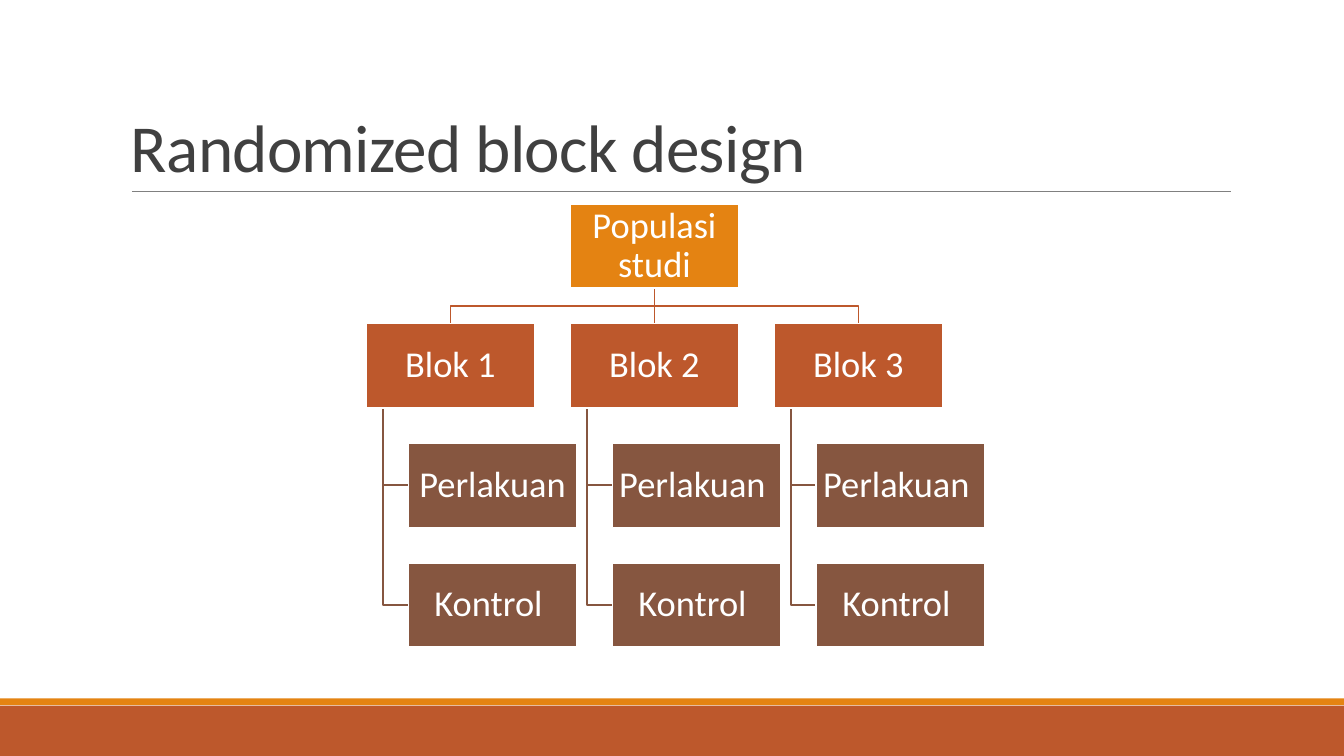
"""Build the randomized block design slide: a population split into treated and control blocks."""
from dataclasses import dataclass
from typing import Any

from pptx import Presentation
from pptx import util as u
from pptx.dml import color
from pptx.enum import shapes, text
from pptx.oxml import ns, xmlchemy
from pptx.oxml import parse_xml


@dataclass(frozen=True)
class Theme:
    font: str = "Calibri"
    ink: str = "404040"
    rule: str = "808080"
    white: str = "FFFFFF"
    orange: str = "E48312"
    rust: str = "BD582C"
    brown: str = "865640"
    title_size: float = 48
    node_size: float = 26
    line_width: float = 1.25
    rule_width: float = 0.5


@dataclass(frozen=True)
class Node:
    label: str
    left: float
    row: int
    fill: str

    @property
    def top(self) -> float:
        return FIRST_TOP + self.row * ROW_STEP

    @property
    def bottom(self) -> float:
        return self.top + NODE_HEIGHT

    @property
    def centre(self) -> float:
        return self.left + NODE_WIDTH / 2

    @property
    def middle(self) -> float:
        return self.top + NODE_HEIGHT / 2


Point = tuple[float, float]
THEME = Theme()
PAGE_WIDTH, PAGE_HEIGHT = 960, 540
NODE_WIDTH, NODE_HEIGHT = 120.4, 60.2
FIRST_TOP, ROW_STEP = 145.6, 85.5
FIRST_LEFT, COLUMN_STEP = 261.6, 145.7
CHILD_INDENT, TRUNK_INDENT = 30.1, 12
BLOCKS = {
    "Blok 1": ("Perlakuan", "Kontrol "),
    "Blok 2": ("Perlakuan ", "Kontrol "),
    "Blok 3": ("Perlakuan ", "Kontrol "),
}


def rgb(value: str) -> color.RGBColor:
    """Turn a hex value into a colour."""
    return color.RGBColor.from_string(value)


def apply(target: Any, values: dict[str, Any]) -> None:
    """Set each format value on the target."""
    for name, value in values.items():
        setattr(target, name, value)


def set_line(shape: Any, value: str, width: float) -> None:
    """Give a shape or connector a solid line."""
    shape.line.color.rgb = rgb(value)
    shape.line.width = u.Pt(width)


def add_block(page: Any, left: float, top: float, width: float, height: float, fill: str) -> Any:
    """Add a plain filled rectangle without a line."""
    box = page.shapes.add_shape(
        shapes.MSO_SHAPE.RECTANGLE, u.Pt(left), u.Pt(top), u.Pt(width), u.Pt(height))
    box.shadow.inherit = False
    box.fill.solid()
    box.fill.fore_color.rgb = rgb(fill)
    box.line.fill.background()
    return box


def write(box: Any, label: str, size: float, ink: str, spacing: float,
          align: Any, anchor: Any, inset: Point) -> Any:
    """Write one paragraph into a box and return its span."""
    across, down = map(u.Pt, inset)
    frame = box.text_frame
    apply(frame, {"word_wrap": True, "vertical_anchor": anchor,
                  "margin_left": across, "margin_right": across,
                  "margin_top": down, "margin_bottom": down})
    para = frame.paragraphs[0]
    apply(para, {"alignment": align, "line_spacing": spacing})
    span = para.add_run()
    span.text = label
    apply(span.font, {"name": THEME.font, "size": u.Pt(size)})
    span.font.color.rgb = rgb(ink)
    return span


def add_line(page: Any, start: Point, end: Point, value: str, width: float) -> None:
    """Draw a straight line without a shadow."""
    line = page.shapes.add_connector(
        shapes.MSO_CONNECTOR.STRAIGHT, *(u.Pt(length) for length in start + end))
    set_line(line, value, width)
    line.element.spPr.append(parse_xml(f"<a:effectLst {ns.nsdecls('a')}/>"))


def add_elbow(page: Any, points: list[Point], value: str) -> None:
    """Draw an open bent line through the points."""
    corners = [(u.Pt(across), u.Pt(down)) for across, down in points]
    builder = page.shapes.build_freeform(*corners[0])
    builder.add_line_segments(corners[1:], close=False)
    elbow = builder.convert_to_shape()
    elbow.shadow.inherit = False
    elbow.fill.background()
    set_line(elbow, value, THEME.line_width)


def add_node(page: Any, node: Node) -> None:
    """Draw one labelled box of the tree."""
    box = add_block(page, node.left, node.top, NODE_WIDTH, NODE_HEIGHT, node.fill)
    set_line(box, THEME.white, THEME.line_width)
    write(box, node.label, THEME.node_size, THEME.white, 0.9,
          text.PP_ALIGN.CENTER, text.MSO_ANCHOR.MIDDLE, (1.3, 1.3))


def link_block(page: Any, root: Node, block: Node) -> None:
    """Join the population to one block."""
    start, end = (root.centre, root.bottom), (block.centre, block.top)
    if block.left == root.left:
        add_line(page, start, end, THEME.rust, THEME.line_width)
        return
    bend = (root.bottom + block.top) / 2
    add_elbow(page, [start, (root.centre, bend), (block.centre, bend), end], THEME.rust)


def link_child(page: Any, block: Node, child: Node) -> None:
    """Join a block to one of its groups."""
    trunk = block.left + TRUNK_INDENT
    add_elbow(page, [(trunk, block.bottom), (trunk, child.middle),
                     (child.left, child.middle)], THEME.brown)


def add_tree(page: Any) -> None:
    """Draw the population, its blocks and their groups."""
    root = Node("Populasi studi", FIRST_LEFT + COLUMN_STEP, 0, THEME.orange)
    nodes = [root]
    for column, (label, groups) in enumerate(BLOCKS.items()):
        block = Node(label, FIRST_LEFT + column * COLUMN_STEP, 1, THEME.rust)
        children = [Node(group, block.left + CHILD_INDENT, row, THEME.brown)
                    for row, group in enumerate(groups, start=2)]
        link_block(page, root, block)
        for child in children:
            link_child(page, block, child)
        nodes += [block, *children]
    for node in nodes:
        add_node(page, node)


def add_title(page: Any) -> None:
    """Add the heading and the rule below it."""
    add_line(page, (94.3, 136.8), (879.1, 136.8), THEME.rule, THEME.rule_width)
    box = page.shapes.add_textbox(u.Pt(86.4), u.Pt(22.6), u.Pt(792), u.Pt(114.2))
    write(box, "Randomized block design", THEME.title_size, THEME.ink, 0.85,
          text.PP_ALIGN.LEFT, text.MSO_ANCHOR.BOTTOM, (7.2, 3.6))
    for properties in box.element.iter(ns.qn("a:rPr")):
        properties.set("spc", "-50")


def main() -> None:
    """Build and save the deck."""
    deck = Presentation()
    apply(deck, {"slide_width": u.Pt(PAGE_WIDTH), "slide_height": u.Pt(PAGE_HEIGHT)})
    page = deck.slides.add_slide(deck.slide_layouts[6])
    add_block(page, 0, 504, PAGE_WIDTH, 36, THEME.rust)
    add_block(page, 0, 498.8, PAGE_WIDTH, 5, THEME.orange)
    add_title(page)
    add_tree(page)
    deck.save("out.pptx")


if __name__ == "__main__":
    main()
